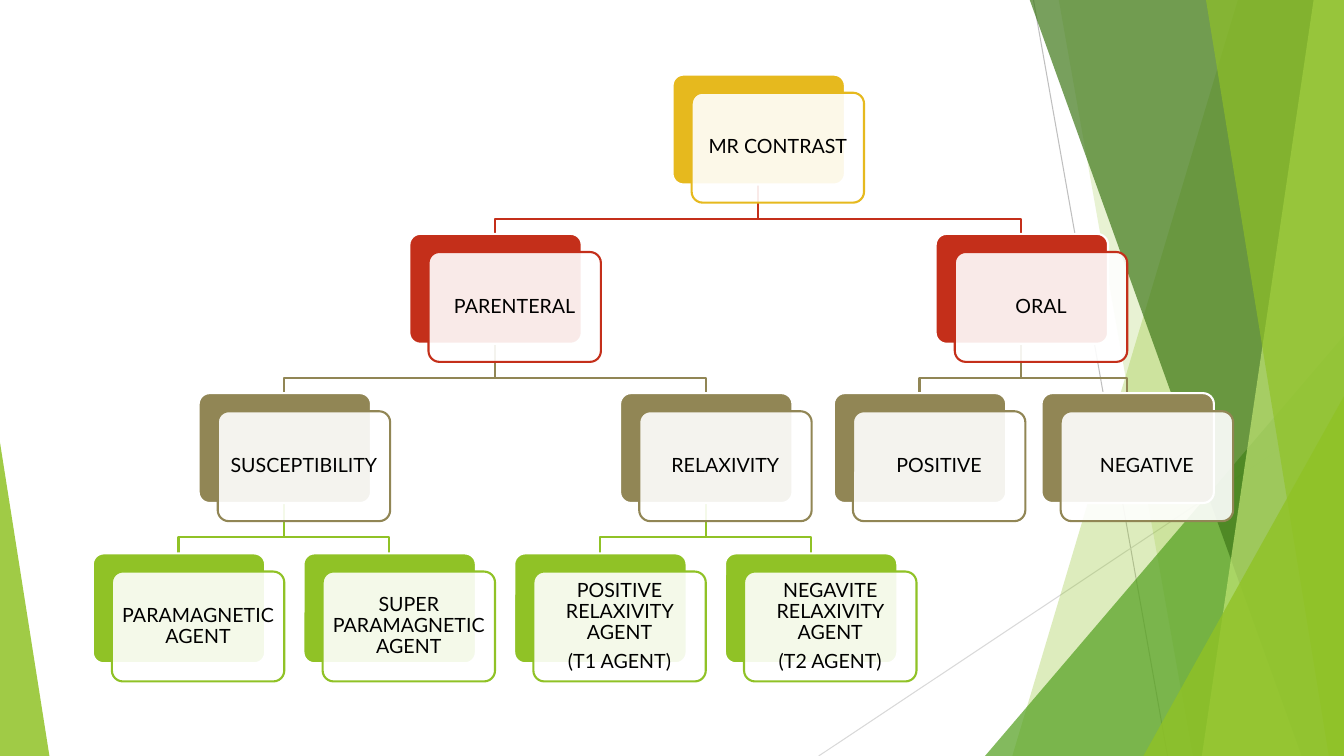
from dataclasses import dataclass

from lxml import etree
from pptx import Presentation
from pptx.dml.color import RGBColor
from pptx.enum.shapes import MSO_CONNECTOR, MSO_SHAPE
from pptx.enum.text import MSO_ANCHOR, PP_ALIGN
from pptx.oxml.ns import qn
from pptx.util import Emu, Pt

STRAIGHT = MSO_CONNECTOR.STRAIGHT
TRIANGLE = MSO_SHAPE.ISOSCELES_TRIANGLE
ROUNDED = MSO_SHAPE.ROUNDED_RECTANGLE
MIDDLE = MSO_ANCHOR.MIDDLE
CENTER = PP_ALIGN.CENTER

EMU_PER_PX = 9144
SLIDE_WIDTH, SLIDE_HEIGHT = 1333, 750
CARD_WIDTH, CARD_HEIGHT = 171, 109
CARD_SHIFT_X, CARD_SHIFT_Y = 19, 18
LABEL_MARGIN, LABEL_INSET = 3, 6
TREE_TOP = 74
ELBOW_DROP = 34


@dataclass(frozen=True)
class Theme:
    font: str = "Lato"
    label_size: float = 14
    label_spacing: float = 0.9
    label_gap: float = 5
    outline: float = 1.5
    hairline: float = 0.75
    text: str = "000000"
    white: str = "FFFFFF"
    light_gray: str = "D9D9D9"
    gray: str = "BFBFBF"
    lime: str = "90C226"
    pale_lime: str = "C0E474"
    green: str = "54A021"
    dark_green: str = "3F7819"
    levels: tuple = ("E6B91E", "C42F1A", "918655", "90C226")


@dataclass(frozen=True)
class Node:
    left: int
    label: tuple
    children: tuple = ()


TREE = Node(667, ("MR CONTRAST",), (
    Node(406, ("PARENTERAL",), (
        Node(197, ("SUSCEPTIBILITY",), (
            Node(92, ("PARAMAGNETIC AGENT",)),
            Node(301, ("SUPER PARAMAGNETIC AGENT",)),
        )),
        Node(615, ("RELAXIVITY",), (
            Node(510, ("POSITIVE RELAXIVITY AGENT", "(T1 AGENT)")),
            Node(719, ("NEGAVITE RELAXIVITY AGENT", "(T2 AGENT)")),
        )),
    )),
    Node(928, ("ORAL",), (
        Node(827, ("POSITIVE",)),
        Node(1033, ("NEGATIVE",)),
    )),
))


def px(length):
    return Emu(length * EMU_PER_PX)


def level_top(level):
    return TREE_TOP + 475 * level // 3


class Canvas:
    def __init__(self, slide, theme):
        self.slide = slide
        self.theme = theme

    def paint(self, shape, fill=None, opacity=100, line=None):
        shape.shadow.inherit = False
        if fill:
            shape.fill.solid()
            shape.fill.fore_color.rgb = RGBColor.from_string(fill)
            if opacity < 100:
                color = shape.fill._xPr.find(".//" + qn("a:srgbClr"))
                etree.SubElement(color, qn("a:alpha")).set("val", str(opacity * 1000))
        else:
            shape.fill.background()
        if line:
            shape.line.color.rgb = RGBColor.from_string(line)
            shape.line.width = Pt(self.theme.outline)
        else:
            shape.line.fill.background()

    def hairline(self, start, end, color):
        connector = self.slide.shapes.add_connector(STRAIGHT, *map(px, start + end))
        connector.line.color.rgb = RGBColor.from_string(color)
        connector.line.width = Pt(self.theme.hairline)
        etree.SubElement(connector._element.spPr, qn("a:effectLst"))

    def outline(self, points, closed, **style):
        builder = self.slide.shapes.build_freeform(*points[0], scale=EMU_PER_PX)
        builder.add_line_segments(points[1:], close=closed)
        self.paint(builder.convert_to_shape(), **style)

    def preset(self, kind, box, adjustment, **style):
        shape = self.slide.shapes.add_shape(kind, *map(px, box))
        shape.adjustments[0] = adjustment
        self.paint(shape, **style)

    def band(self, top_left, bottom_left, color, opacity):
        corners = [(top_left, -1), (SLIDE_WIDTH, -1),
                   (SLIDE_WIDTH, SLIDE_HEIGHT), (bottom_left, SLIDE_HEIGHT)]
        self.outline(corners, True, fill=color, opacity=opacity)

    def corner(self, left, top, width, apex, color, opacity):
        box = (left, top, width, SLIDE_HEIGHT - top)
        self.preset(TRIANGLE, box, apex, fill=color, opacity=opacity)

    def label(self, box, lines):
        frame = self.slide.shapes.add_textbox(*map(px, box)).text_frame
        frame.word_wrap = True
        frame.vertical_anchor = MIDDLE
        frame.margin_left = frame.margin_right = px(LABEL_INSET)
        frame.margin_top = frame.margin_bottom = px(LABEL_INSET)
        for index, line in enumerate(lines):
            paragraph = frame.add_paragraph() if index else frame.paragraphs[0]
            paragraph.alignment = CENTER
            paragraph.line_spacing = self.theme.label_spacing
            paragraph.space_after = Pt(self.theme.label_gap)
            run = paragraph.add_run()
            run.text = line
            run.font.name = self.theme.font
            run.font.size = Pt(self.theme.label_size)
            run.font.color.rgb = RGBColor.from_string(self.theme.text)

    def branches(self, node, level=0):
        start_x = node.left + CARD_WIDTH // 2
        start_y = level_top(level) + CARD_HEIGHT
        elbow_y = start_y + ELBOW_DROP
        for child in node.children:
            end_x = child.left + CARD_WIDTH // 2
            points = [(start_x, start_y), (start_x, elbow_y),
                      (end_x, elbow_y), (end_x, level_top(level + 1))]
            self.outline(points, False, line=self.theme.levels[level + 1])
            self.branches(child, level + 1)

    def cards(self, node, level=0):
        color = self.theme.levels[level]
        left, top = node.left, level_top(level)
        self.preset(ROUNDED, (left, top, CARD_WIDTH, CARD_HEIGHT), 0.1,
                    fill=color, line=self.theme.white)
        left, top = left + CARD_SHIFT_X, top + CARD_SHIFT_Y
        self.preset(ROUNDED, (left, top, CARD_WIDTH, CARD_HEIGHT), 0.1,
                    fill=self.theme.white, opacity=90, line=color)
        self.label((left + LABEL_MARGIN, top + LABEL_MARGIN,
                    CARD_WIDTH - 2 * LABEL_MARGIN, CARD_HEIGHT - 2 * LABEL_MARGIN),
                   node.label)
        for child in node.children:
            self.cards(child, level + 1)

    def backdrop(self):
        theme = self.theme
        self.hairline((1025, 0), (1158, SLIDE_HEIGHT), theme.gray)
        self.hairline((SLIDE_WIDTH, 403), (812, SLIDE_HEIGHT), theme.light_gray)
        self.band(1228, 1004, theme.lime, 30)
        self.band(1050, 1183, theme.lime, 20)
        self.corner(977, 333, 356, 1, theme.green, 72)
        self.band(1021, 1291, theme.dark_green, 70)
        self.band(1303, 1192, theme.pale_lime, 70)
        self.band(1196, 1318, theme.lime, 65)
        self.corner(1134, 393, 199, 1, theme.lime, 80)
        self.corner(0, 439, 49, 0, theme.lime, 85)


def main():
    presentation = Presentation()
    presentation.slide_width = px(SLIDE_WIDTH)
    presentation.slide_height = px(SLIDE_HEIGHT)
    slide = presentation.slides.add_slide(presentation.slide_layouts[6])
    canvas = Canvas(slide, Theme())
    canvas.backdrop()
    canvas.branches(TREE)
    canvas.cards(TREE)
    presentation.save("out.pptx")


if __name__ == "__main__":
    main()
